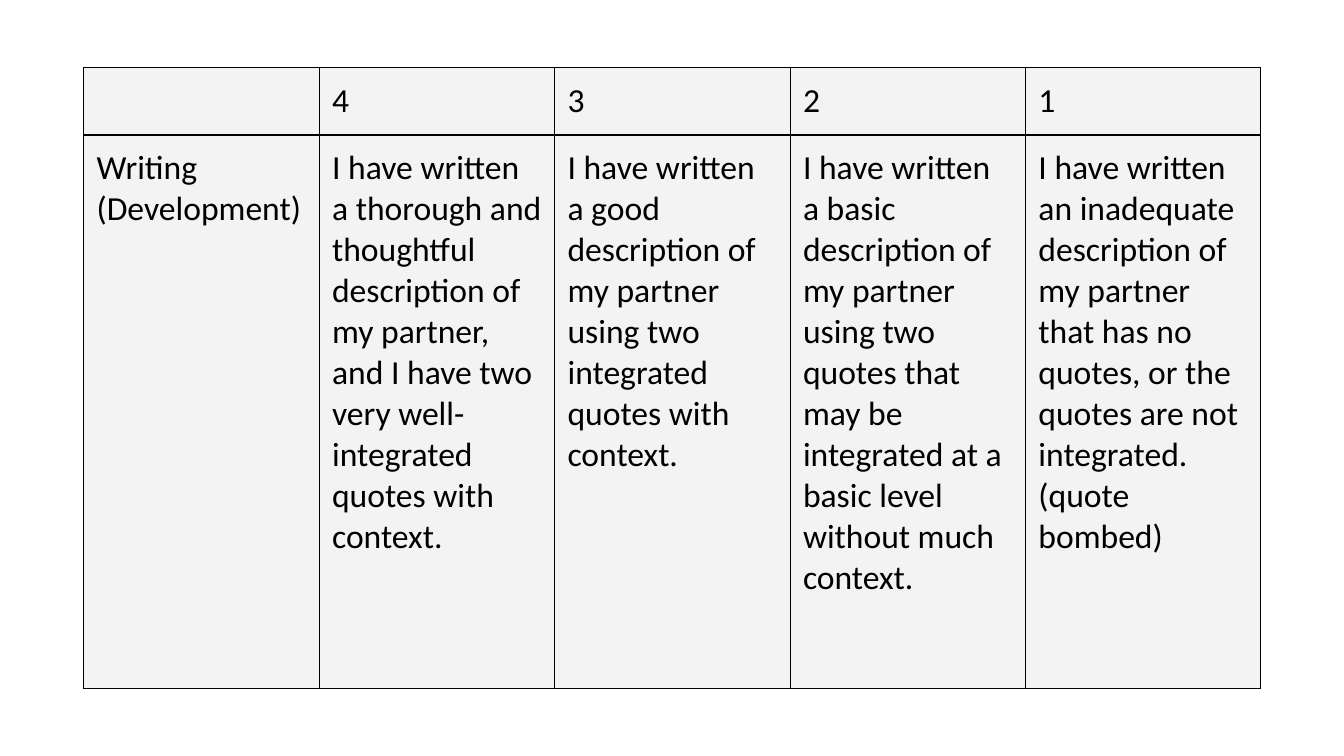
from lxml import etree
from pptx import Presentation
from pptx.dml.color import RGBColor
from pptx.enum.text import MSO_ANCHOR
from pptx.oxml.ns import qn
from pptx.util import Pt

TOP = MSO_ANCHOR.TOP
BLANK_LAYOUT = 6
INK = "000000"
PAPER = "F3F3F3"
INSET = Pt(9.3)
COLUMN_WIDTH = Pt(168.2)
ROW_HEIGHTS = [Pt(48), Pt(395.5)]
BORDERS = {"a:lnL": Pt(0.75), "a:lnR": Pt(0.75), "a:lnT": Pt(0.75), "a:lnB": Pt(1.25)}

RUBRIC = [
    ["", "4", "3", "2", "1"],
    [
        "Writing (Development)",
        "I have written a thorough and thoughtful description of my partner, "
        "and I have two very well-integrated quotes with context.",
        "I have written a good description of my partner using two integrated "
        "quotes with context.",
        "I have written a basic description of my partner using two quotes that "
        "may be integrated at a basic level without much context.",
        "I have written an inadequate description of my partner that has no "
        "quotes, or the quotes are not integrated. (quote bombed)",
    ],
]


def color(value):
    return RGBColor.from_string(value)


def add_borders(cell):
    properties = cell._tc.get_or_add_tcPr()
    for side, width in BORDERS.items():
        line = etree.SubElement(properties, qn(side), w=str(width))
        solid = etree.SubElement(line, qn("a:solidFill"))
        etree.SubElement(solid, qn("a:srgbClr"), val=INK)


CELL_FORMAT = {
    "margin_left": INSET,
    "margin_right": INSET,
    "margin_top": INSET,
    "margin_bottom": INSET,
    "vertical_anchor": TOP,
}
FONT_FORMAT = {"name": "Calibri", "size": Pt(24), "bold": False}

prs = Presentation()
prs.slide_width = Pt(960)
prs.slide_height = Pt(540)
slide = prs.slides.add_slide(prs.slide_layouts[BLANK_LAYOUT])

rubric = slide.shapes.add_table(
    len(RUBRIC), len(RUBRIC[0]), Pt(59.75), Pt(48.4),
    COLUMN_WIDTH * len(RUBRIC[0]), sum(ROW_HEIGHTS),
).table
rubric.first_row = False
rubric.horz_banding = False

for column in rubric.columns:
    column.width = COLUMN_WIDTH

for row, height, wording in zip(rubric.rows, ROW_HEIGHTS, RUBRIC):
    row.height = height
    for cell, words in zip(row.cells, wording):
        for attribute, value in CELL_FORMAT.items():
            setattr(cell, attribute, value)
        add_borders(cell)
        cell.fill.solid()
        cell.fill.fore_color.rgb = color(PAPER)
        if words:
            run = cell.text_frame.paragraphs[0].add_run()
            run.text = words
            for attribute, value in FONT_FORMAT.items():
                setattr(run.font, attribute, value)
            run.font.color.rgb = color(INK)

prs.save("out.pptx")
